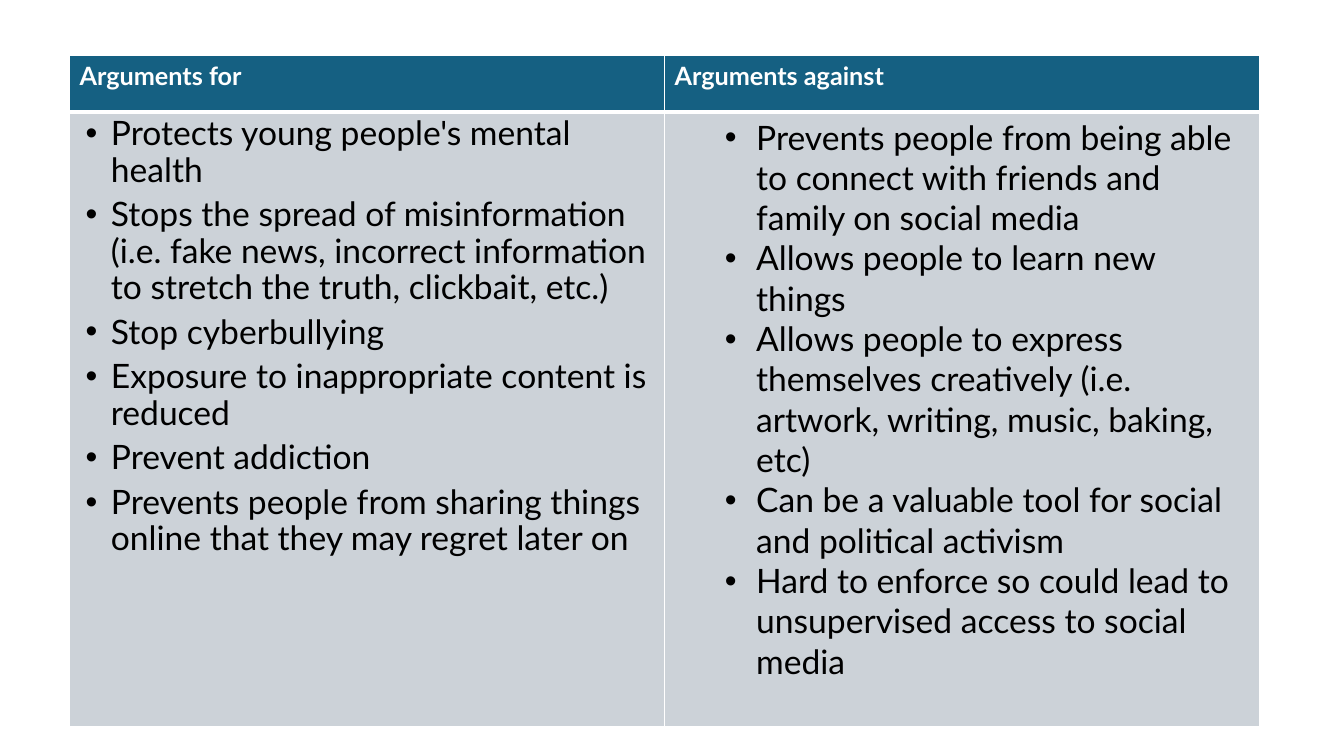
from lxml.etree import SubElement
from pptx import Presentation
from pptx.dml.color import RGBColor
from pptx.oxml.ns import qn
from pptx.util import Inches, Pt

WHITE = RGBColor(0xFF, 0xFF, 0xFF)
BLACK = RGBColor(0x00, 0x00, 0x00)
TEAL = RGBColor(0x15, 0x60, 0x82)
PALE_GREY = RGBColor(0xCC, 0xD2, 0xD8)

FONT = "Lato"
LEFT, TOP = 0.69, 0.55
COLUMN_WIDTH = 5.9
HEADER_HEIGHT, BODY_HEIGHT = 0.56, 6.1

ARGUMENTS_FOR = [
    "Protects young people's mental health",
    "Stops the spread of misinformation (i.e. fake news, incorrect information "
    "to stretch the truth, clickbait, etc.)",
    "Stop cyberbullying",
    "Exposure to inappropriate content is reduced",
    "Prevent addiction",
    "Prevents people from sharing things online that they may regret later on",
]
ARGUMENTS_AGAINST = [
    "Prevents people from being able to connect with friends and family on "
    "social media",
    "Allows people to learn new things",
    "Allows people to express themselves creatively (i.e. artwork, writing, "
    "music, baking, etc)",
    "Can be a valuable tool for social and political activism",
    "Hard to enforce so could lead to unsupervised access to social media",
]


def add_fill(parent, color):
    fill = SubElement(parent, qn("a:solidFill"))
    SubElement(fill, qn("a:srgbClr"), val=str(color))


def style_cell(cell, color, bottom_width=1):
    """Draw white borders, then fill the cell."""
    properties = cell._tc.get_or_add_tcPr()
    for side, width in (("L", 1), ("R", 1), ("T", 1), ("B", bottom_width)):
        border = SubElement(properties, qn(f"a:ln{side}"), w=str(Pt(width)))
        add_fill(border, WHITE)
    cell.fill.solid()
    cell.fill.fore_color.rgb = color


def set_font(paragraph, size, color, bold):
    font = paragraph.font
    font.name, font.size, font.bold = FONT, Pt(size), bold
    font.color.rgb = color


def add_bullet(paragraph, margin, hanging):
    properties = paragraph._p.get_or_add_pPr()
    properties.set("marL", str(Inches(margin)))
    properties.set("indent", str(-Inches(hanging)))
    bullet_color = SubElement(properties, qn("a:buClr"))
    SubElement(bullet_color, qn("a:srgbClr"), val=str(BLACK))
    SubElement(properties, qn("a:buFont"), typeface="Arial")
    SubElement(properties, qn("a:buChar"), char="•")


def write_heading(cell, heading):
    style_cell(cell, TEAL, bottom_width=3)
    cell.text = heading
    set_font(cell.text_frame.paragraphs[0], 18, WHITE, True)


def write_arguments(cell, arguments, margin, hanging, level=0,
                    line_spacing=1.0, space_after=0):
    style_cell(cell, PALE_GREY)
    cell.text = "\n".join(arguments)
    for paragraph in cell.text_frame.paragraphs:
        paragraph.level = level
        paragraph.line_spacing = line_spacing
        paragraph.space_after = Pt(space_after)
        add_bullet(paragraph, margin, hanging)
        set_font(paragraph, 24, BLACK, False)


def main():
    deck = Presentation()
    deck.slide_width, deck.slide_height = Inches(13.33), Inches(7.5)
    slide = deck.slides.add_slide(deck.slide_layouts[6])

    # Table grid
    debate = slide.shapes.add_table(
        2, 2, Inches(LEFT), Inches(TOP),
        Inches(2 * COLUMN_WIDTH), Inches(HEADER_HEIGHT + BODY_HEIGHT)).table
    for row, height in zip(debate.rows, (HEADER_HEIGHT, BODY_HEIGHT)):
        row.height = Inches(height)

    # Headings
    for column, heading in enumerate(("Arguments for", "Arguments against")):
        write_heading(debate.cell(0, column), heading)

    # Arguments
    write_arguments(debate.cell(1, 0), ARGUMENTS_FOR, 0.31, 0.25,
                    line_spacing=0.9, space_after=6)
    write_arguments(debate.cell(1, 1), ARGUMENTS_AGAINST, 0.81, 0.31, level=1)

    deck.save("out.pptx")


if __name__ == "__main__":
    main()
